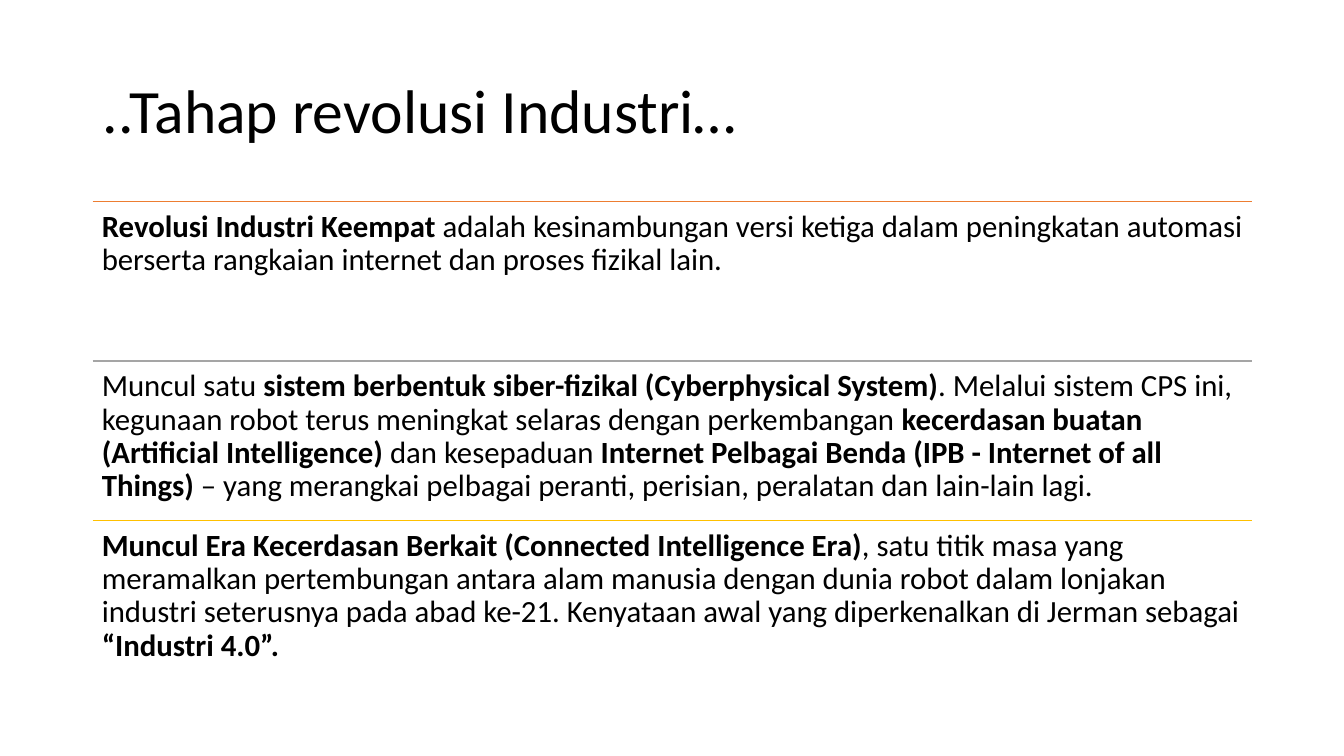
from lxml.etree import SubElement
from pptx import Presentation
from pptx.dml.color import RGBColor
from pptx.enum.shapes import MSO_CONNECTOR as Connector
from pptx.enum.text import MSO_ANCHOR as Anchor, PP_ALIGN as Align
from pptx.oxml.ns import qn
from pptx.util import Inches, Pt

COLORS = {"text": "000000", "orange": "ED7D31", "gray": "A5A5A5", "gold": "FFC000"}
FONT = "Calibri"
TITLE_BOX = (0.92, 0.4, 11.5, 1.45)
STAGES_BOX = (0.92, 2, 11.5, 4.75)
STAGES = [
    ("orange", [
        ("Revolusi Industri Keempat ", True),
        ("adalah kesinambungan versi ketiga dalam peningkatan automasi berserta "
         "rangkaian internet dan proses fizikal lain.", False),
    ]),
    ("gray", [
        ("Muncul satu ", False),
        ("sistem berbentuk siber-fizikal (Cyberphysical System)", True),
        (". Melalui sistem CPS ini, kegunaan robot terus meningkat selaras dengan "
         "perkembangan ", False),
        ("kecerdasan buatan (Artificial Intelligence) ", True),
        ("dan kesepaduan ", False),
        ("Internet Pelbagai Benda (IPB - Internet of all Things)", True),
        (" – yang merangkai pelbagai peranti, perisian, peralatan dan lain-lain lagi.", False),
    ]),
    ("gold", [
        ("Muncul Era Kecerdasan Berkait (Connected Intelligence Era)", True),
        (", satu titik masa yang meramalkan pertembungan antara alam manusia dengan "
         "dunia robot dalam lonjakan industri seterusnya pada abad ke-21. Kenyataan "
         "awal yang diperkenalkan di Jerman sebagai ", False),
        ("“Industri 4.0”.", True),
    ]),
]


def set_attributes(target, values):
    """Set each named attribute of the target."""
    for name, value in values.items():
        setattr(target, name, value)


def add_run(paragraph, text, size, bold=False):
    """Append a formatted run to the paragraph."""
    run = paragraph.add_run()
    run.text = text
    set_attributes(run.font, {"name": FONT, "size": Pt(size), "bold": bold})
    run.font.color.rgb = RGBColor.from_string(COLORS["text"])


def place_title(slide, box, text):
    """Move the title placeholder to the box and fill it."""
    title = slide.shapes.title
    left, top, width, height = map(Inches, box)
    set_attributes(title, {"left": left, "top": top, "width": width, "height": height})
    title.text_frame.vertical_anchor = Anchor.MIDDLE
    paragraph = title.text_frame.paragraphs[0]
    set_attributes(paragraph, {"alignment": Align.LEFT, "line_spacing": 0.9})
    add_run(paragraph, text, 44)


def add_rule(slide, left, top, width, color):
    """Draw a flat horizontal rule."""
    rule = slide.shapes.add_connector(Connector.STRAIGHT, left, top, left + width, top)
    rule.line.color.rgb = RGBColor.from_string(COLORS[color])
    rule.line.width = Pt(1)
    SubElement(rule._element.spPr, qn("a:effectLst"))


def add_stage(slide, box, color, pieces):
    """Place a rule with its paragraph below in the box."""
    left, top, width, height = map(Inches, box)
    add_rule(slide, left, top, width, color)
    frame = slide.shapes.add_textbox(left, top, width, height).text_frame
    margins = ("margin_left", "margin_top", "margin_right", "margin_bottom")
    set_attributes(frame, {"word_wrap": True, **dict.fromkeys(margins, Inches(0.09))})
    paragraph = frame.paragraphs[0]
    set_attributes(paragraph, {"alignment": Align.LEFT, "line_spacing": 0.9})
    for text, bold in pieces:
        add_run(paragraph, text, 22, bold)


def add_stages(slide, box, stages):
    """Stack the stages in equal rows of the box."""
    left, top, width, height = box
    row_height = height / len(stages)
    for row, (color, pieces) in enumerate(stages):
        add_stage(slide, (left, top + row * row_height, width, row_height), color, pieces)


def main():
    """Build and save the slide."""
    presentation = Presentation()
    set_attributes(presentation, {"slide_width": Inches(13.33), "slide_height": Inches(7.5)})
    slide = presentation.slides.add_slide(presentation.slide_layouts.get_by_name("Title Only"))
    place_title(slide, TITLE_BOX, "..Tahap revolusi Industri…")
    add_stages(slide, STAGES_BOX, STAGES)
    presentation.save("out.pptx")


if __name__ == "__main__":
    main()
